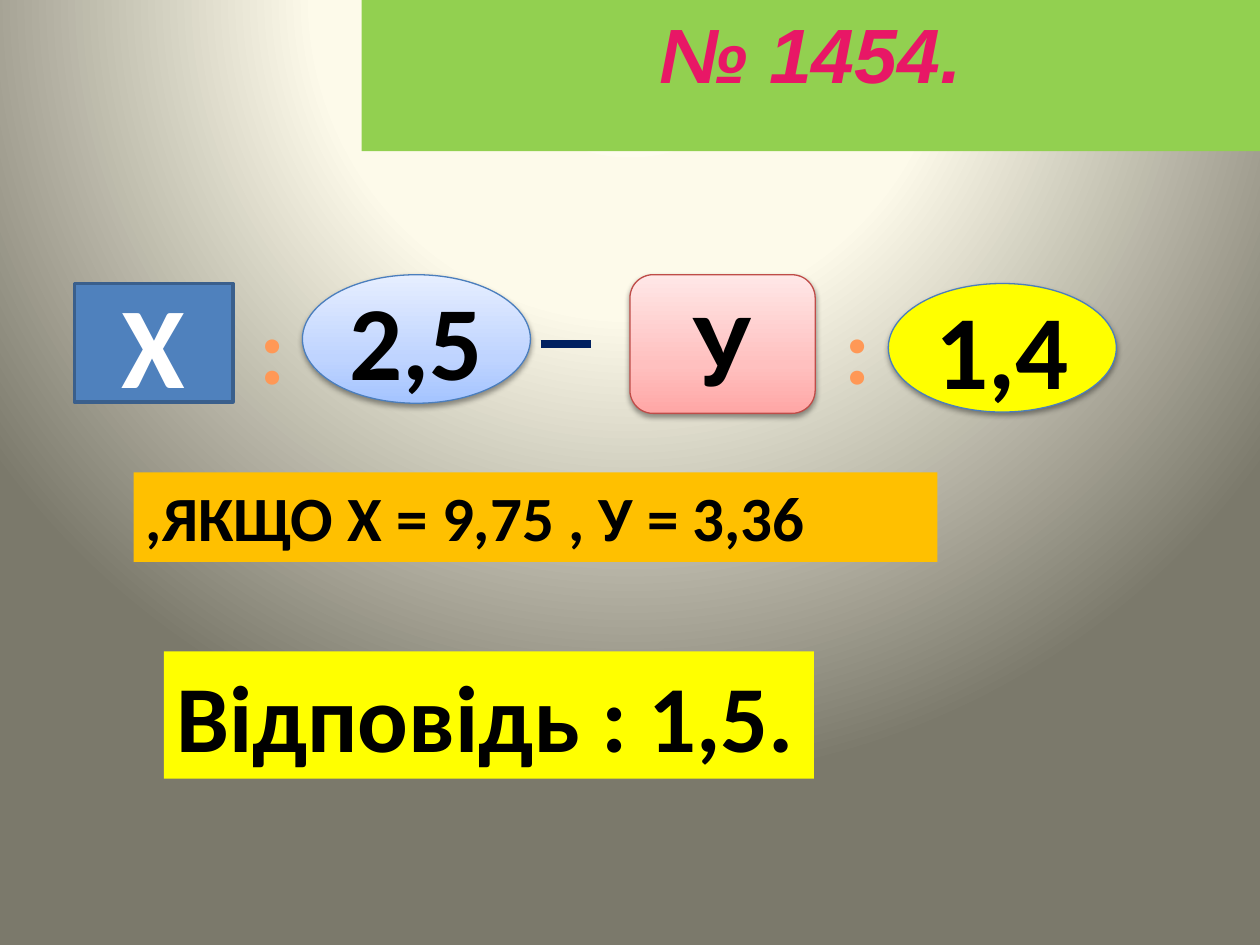
from dataclasses import dataclass

import lxml.etree
import pptx
import pptx.dml.color
import pptx.enum.shapes
import pptx.enum.text
import pptx.oxml
import pptx.oxml.ns
import pptx.util

SHAPE = pptx.enum.shapes.MSO_SHAPE
ALIGN = pptx.enum.text.PP_ALIGN
ANCHOR = pptx.enum.text.MSO_ANCHOR
AUTO = pptx.enum.text.MSO_AUTO_SIZE
qn = pptx.oxml.ns.qn
WIDTH = pptx.util.Inches(10)
HEIGHT = pptx.util.Inches(7.5)


@dataclass(frozen=True)
class Gradient:
    stops: tuple
    angle: int = 0
    circle: bool = False


@dataclass(frozen=True)
class Theme:
    background: Gradient = Gradient(((0, "FEFCEE"), (40, "FDFAEA"), (100, "7B796B")), circle=True)
    rainbow: Gradient = Gradient(((0, "A603AB"), (12, "E81766"), (27, "EE3F17"), (48, "FFFF00"),
                                  (65, "1A8D48"), (79, "0819FB"), (100, "A603AB")))
    copper: Gradient = Gradient(((0, "9D4700"), (78, "FF9856"), (100, "FFF5F1")), 90)
    sky: Gradient = Gradient(((0, "A4C4FF"), (35, "BFD4FF"), (100, "E6EEFF")), 270)
    rose: Gradient = Gradient(((0, "FFA6A5"), (35, "FFC0BF"), (100, "FFE7E7")), 270)
    green: str = "92D050"
    blue: str = "4F81BD"
    blue_edge: str = "3A5F8C"
    sky_edge: str = "4B7EBC"
    rose_edge: str = "BF4C48"
    navy: str = "002060"
    yellow: str = "FFFF00"
    amber: str = "FFC000"
    white: str = "FFFFFF"
    black: str = "000000"
    glyph_edge: str = "EAEAEA"
    heading_size: int = 44
    variable_size: int = 66
    number_size: int = 60
    answer_size: int = 54
    condition_size: int = 36
    heading_font: str = "Arial"
    body_font: str = "Calibri"


THEME = Theme()


def rgb(value):
    return pptx.dml.color.RGBColor.from_string(value)


def place(left, top, width, height):
    return [round(share * side / 100) for share, side in
            zip((left, top, width, height), (WIDTH, HEIGHT, WIDTH, HEIGHT))]


def xml(body):
    return pptx.oxml.parse_xml(body.replace(">", f" {pptx.oxml.ns.nsdecls('a')}>", 1))


def gradient_element(gradient):
    stops = "".join(f'<a:gs pos="{position * 1000}"><a:srgbClr val="{color}"/></a:gs>'
                    for position, color in gradient.stops)
    direction = f'<a:lin ang="{gradient.angle * 60000}" scaled="0"/>'
    if gradient.circle:
        direction = ('<a:path path="circle"><a:fillToRect l="50000" t="-80000" '
                     'r="50000" b="180000"/></a:path>')
    return xml(f'<a:gradFill rotWithShape="1"><a:gsLst>{stops}</a:gsLst>{direction}</a:gradFill>')


def paint(fill, owner, color):
    if isinstance(color, Gradient):
        fill.background()
        blank = owner.find(".//" + qn("a:noFill"))
        blank.getparent().replace(blank, gradient_element(color))
    else:
        fill.solid()
        fill.fore_color.rgb = rgb(color)


def write(shape, text, *, size, color=THEME.black, font=THEME.body_font, italic=False,
          align=ALIGN.CENTER, anchor=ANCHOR.TOP, wrap=True, grow=False, outline=None):
    frame = shape.text_frame
    frame.word_wrap = wrap
    frame.auto_size = AUTO.SHAPE_TO_FIT_TEXT if grow else AUTO.NONE
    frame.vertical_anchor = anchor
    paragraph = frame.paragraphs[0]
    paragraph.alignment = align
    run = paragraph.add_run()
    run.text = text
    run.font.size = pptx.util.Pt(size)
    run.font.name = font
    run.font.bold = True
    run.font.italic = italic
    properties = run._r.get_or_add_rPr()
    paint(run.font.fill, properties, color)
    if outline:
        properties.insert(0, xml(f'<a:ln w="12700"><a:solidFill><a:srgbClr val="{outline}"/>'
                                 '</a:solidFill></a:ln>'))


def decorate(shape, fill, edge=None, edge_width=0.75, shadow=False):
    properties = shape.element.spPr
    paint(shape.fill, properties, fill)
    if edge:
        shape.line.color.rgb = rgb(edge)
        shape.line.width = pptx.util.Pt(edge_width)
    else:
        shape.line.fill.background()
    shape.shadow.inherit = False
    if shadow:
        properties.find(qn("a:effectLst")).append(xml(
            '<a:outerShdw blurRad="40000" dist="20000" dir="5400000" rotWithShape="0">'
            '<a:srgbClr val="000000"><a:alpha val="38000"/></a:srgbClr></a:outerShdw>'))


def add_heading(slide, text):
    heading = slide.shapes.title
    heading.left, heading.top, heading.width, heading.height = place(28.7, 0, 71.3, 16)
    decorate(heading, THEME.green)
    write(heading, text, size=THEME.heading_size, font=THEME.heading_font, italic=True,
          color=THEME.rainbow, wrap=False, outline=THEME.glyph_edge)


def add_operand(slide, text, kind, box, fill, edge, *, size=THEME.number_size,
                color=THEME.black, edge_width=0.75, shadow=True):
    operand = slide.shapes.add_shape(kind, *place(*box))
    decorate(operand, fill, edge, edge_width, shadow)
    write(operand, text, size=size, color=color, anchor=ANCHOR.MIDDLE)


def add_division(slide, left):
    division = slide.shapes.add_textbox(*place(left, 30, 4.7, 13.47))
    write(division, ":", size=THEME.answer_size, color=THEME.copper, grow=True)


def add_minus(slide):
    left, top, width, _ = place(42.9, 36.4, 4, 0)
    minus = slide.shapes.add_connector(pptx.enum.shapes.MSO_CONNECTOR.STRAIGHT,
                                       left, top, left + width, top)
    minus.line.color.rgb = rgb(THEME.navy)
    minus.line.width = pptx.util.Pt(4.5)
    lxml.etree.SubElement(minus.element.spPr, qn("a:effectLst"))


def add_statement(slide, text, box, fill, size):
    statement = slide.shapes.add_textbox(*place(*box))
    decorate(statement, fill)
    write(statement, text, size=size, align=ALIGN.LEFT, grow=True)


def main():
    deck = pptx.Presentation()
    deck.slide_width, deck.slide_height = WIDTH, HEIGHT
    slide = deck.slides.add_slide(deck.slide_layouts.get_by_name("Title Only"))
    paint(slide.background.fill, slide.element, THEME.background)
    add_heading(slide, "№ 1454.")
    add_operand(slide, "Х", SHAPE.RECTANGLE, (5.9, 30, 12.6, 12.53), THEME.blue, THEME.blue_edge,
                size=THEME.variable_size, color=THEME.white, edge_width=2, shadow=False)
    add_operand(slide, "2,5", SHAPE.OVAL, (24, 29.07, 18.1, 13.6), THEME.sky, THEME.sky_edge)
    add_minus(slide)
    add_operand(slide, "У", SHAPE.ROUNDED_RECTANGLE, (50, 29.07, 14.7, 14.67),
                THEME.rose, THEME.rose_edge)
    for left in (19.3, 65.7):
        add_division(slide, left)
    add_operand(slide, "1,4", SHAPE.OVAL, (70.5, 30, 18.1, 13.6), THEME.yellow, THEME.sky_edge)
    add_statement(slide, ",ЯКЩО Х = 9,75 , У = 3,36", (10.6, 50, 63.8, 9.47),
                  THEME.amber, THEME.condition_size)
    add_statement(slide, "Відповідь : 1,5.", (13, 68.93, 51.6, 13.47),
                  THEME.yellow, THEME.answer_size)
    deck.save("out.pptx")


if __name__ == "__main__":
    main()
